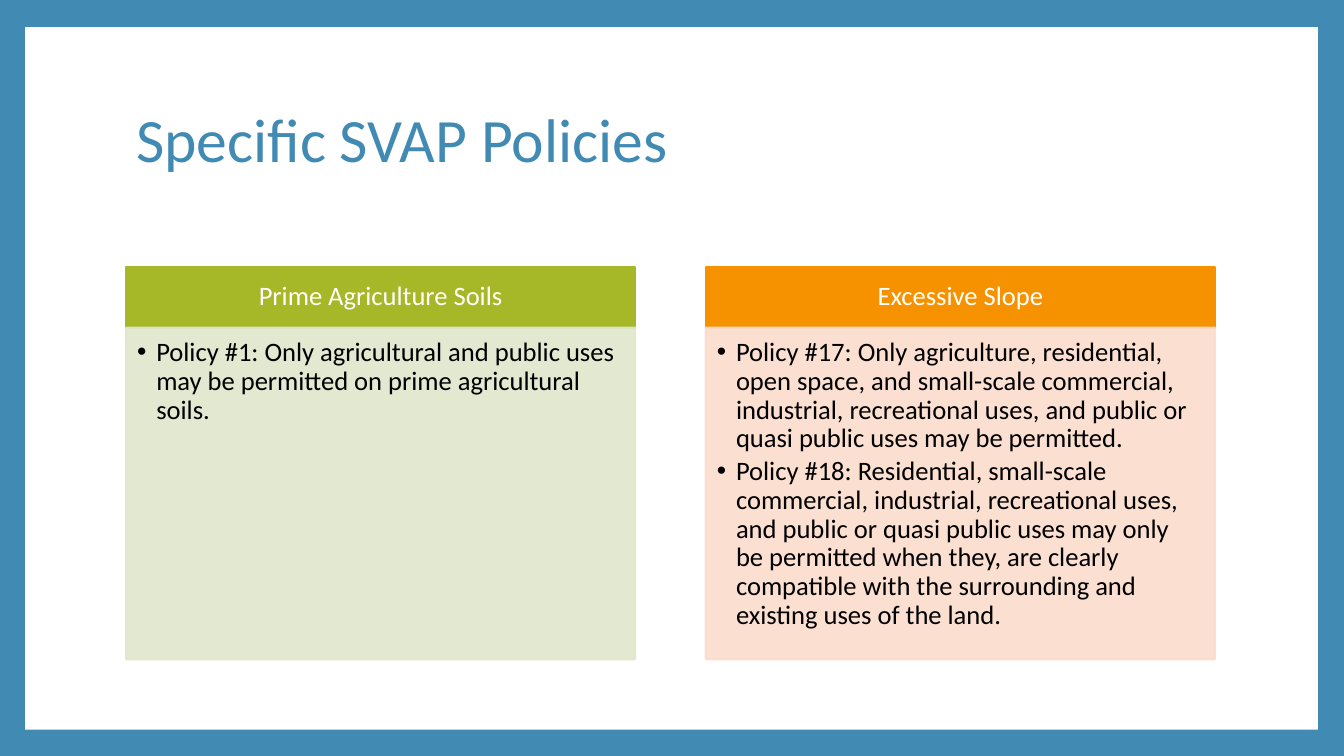
import pptx
import pptx.util
import pptx.dml.color
import pptx.enum.shapes
import pptx.enum.text
import pptx.oxml.ns
from lxml import etree

Inches, Pt = pptx.util.Inches, pptx.util.Pt
ALIGN, ANCHOR = pptx.enum.text.PP_ALIGN, pptx.enum.text.MSO_ANCHOR
qn = pptx.oxml.ns.qn

# Content
TITLE = "Specific SVAP Policies"
POLICIES = [
    ("Prime Agriculture Soils", "green", "pale_green", [
        "Policy #1: Only agricultural and public uses may be permitted on "
        "prime agricultural soils.",
    ]),
    ("Excessive Slope", "orange", "pale_orange", [
        "Policy #17: Only agriculture, residential, open space, and "
        "small-scale commercial, industrial, recreational uses, and public "
        "or quasi public uses may be permitted.",
        "Policy #18: Residential, small-scale commercial, industrial, "
        "recreational uses, and public or quasi public uses may only be "
        "permitted when they, are clearly compatible with the surrounding "
        "and existing uses of the land.",
    ]),
]

# Style and measures in inches
COLORS = {
    "blue": "418AB3", "white": "FFFFFF", "black": "000000",
    "green": "A6B727", "pale_green": "E1E6CD",
    "orange": "F69200", "pale_orange": "FBDCCC",
}
FONT = "Calibri"
LEFT, TOP, COL_W, COL_STEP = 1.25, 2.65, 5.05, 5.75
HEAD_H, BODY_H, HANG = 0.6, 3.29, 0.19


def rgb(name):
    return pptx.dml.color.RGBColor.from_string(COLORS[name])


def add_box(s, x, y, w, h, color, outline=True, opacity=100):
    sp = s.shapes.add_shape(pptx.enum.shapes.MSO_SHAPE.RECTANGLE,
                            Inches(x), Inches(y), Inches(w), Inches(h))
    sp.shadow.inherit = False
    sp.fill.solid()
    sp.fill.fore_color.rgb = rgb(color)
    if outline:
        sp.line.color.rgb = rgb(color)
        sp.line.width = Pt(1.5)
    else:
        sp.line.fill.background()
    if opacity < 100:
        for clr in list(sp.element.spPr.iter(qn("a:srgbClr"))):
            etree.SubElement(clr, qn("a:alpha"), val=str(opacity * 1000))
    return sp


def set_frame(tf, anchor, insets):
    tf.word_wrap = True
    tf.vertical_anchor = anchor
    (tf.margin_left, tf.margin_top,
     tf.margin_right, tf.margin_bottom) = map(Inches, insets)


def add_text(p, text, size, color, align=ALIGN.LEFT):
    p.alignment = align
    p.line_spacing = 0.9
    r = p.add_run()
    r.text = text
    r.font.name = FONT
    r.font.size = Pt(size)
    r.font.color.rgb = rgb(color)


def add_bullet(p):
    pPr = p._p.get_or_add_pPr()
    pPr.set("marL", str(Inches(HANG)))
    pPr.set("indent", str(-Inches(HANG)))
    etree.SubElement(pPr, qn("a:buFont"), typeface="Arial")
    etree.SubElement(pPr, qn("a:buChar"), char="•")


def add_column(s, x, heading, head_color, body_color, policies):
    # Heading bar
    tf = add_box(s, x, TOP, COL_W, HEAD_H, head_color).text_frame
    set_frame(tf, ANCHOR.MIDDLE, (0.15, 0.08, 0.15, 0.08))
    add_text(tf.paragraphs[0], heading, 19, "white", ALIGN.CENTER)

    # Policy list
    tf = add_box(s, x, TOP + HEAD_H, COL_W, BODY_H, body_color,
                 opacity=90).text_frame
    set_frame(tf, ANCHOR.TOP, (0.11, 0.11, 0.15, 0.17))
    for i, policy in enumerate(policies):
        p = tf.add_paragraph() if i else tf.paragraphs[0]
        add_bullet(p)
        add_text(p, policy, 19, "black")
        p.space_after = Pt(3)


def main():
    prs = pptx.Presentation()
    prs.slide_width, prs.slide_height = Inches(13.33), Inches(7.5)
    s = prs.slides.add_slide(prs.slide_layouts[5])

    # Blue frame around a white panel
    s.background.fill.solid()
    s.background.fill.fore_color.rgb = rgb("blue")
    panel = add_box(s, 0.25, 0.27, 12.82, 6.97, "white", outline=False)
    s.shapes.title.element.addprevious(panel.element)

    # Title
    title = s.shapes.title
    title.left, title.top = Inches(LEFT), Inches(0.67)
    title.width, title.height = Inches(10.8), Inches(1.48)
    set_frame(title.text_frame, ANCHOR.MIDDLE, (0.1, 0.05, 0.1, 0.05))
    add_text(title.text_frame.paragraphs[0], TITLE, 44, "blue")

    # Policy columns
    for i, column in enumerate(POLICIES):
        add_column(s, LEFT + i * COL_STEP, *column)

    prs.save("out.pptx")


if __name__ == "__main__":
    main()
